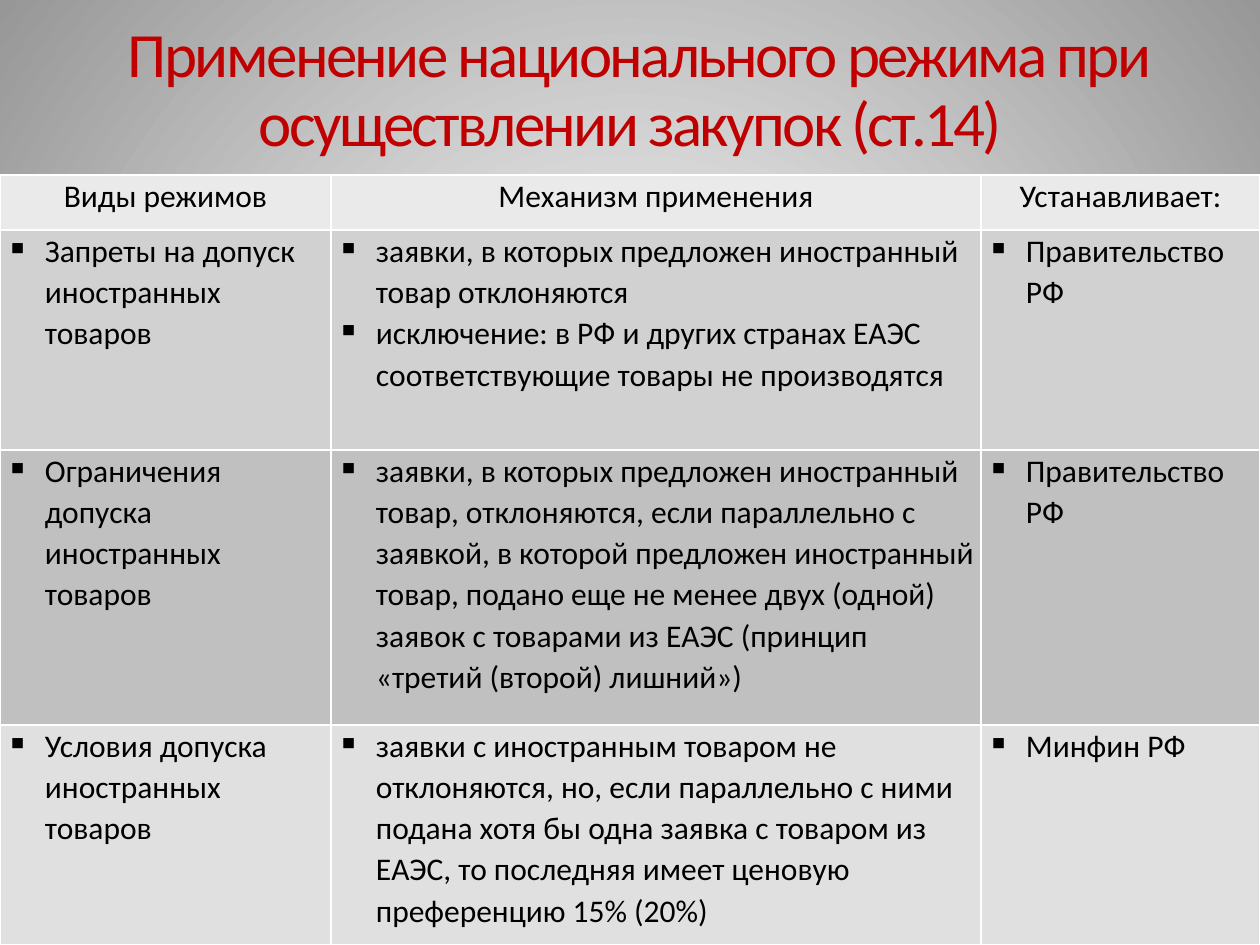
from dataclasses import dataclass

from lxml.etree import SubElement
from pptx import Presentation
from pptx.dml.color import RGBColor
from pptx.enum.text import MSO_ANCHOR, MSO_AUTO_SIZE, PP_ALIGN
from pptx.oxml.ns import qn
from pptx.util import Emu, Pt

FONT = "Calibri"
WIDTH, HEIGHT = 1260, 945
TABLE_TOP = 175
COLS = (331, 650, 279)
INDENT = 39


@dataclass(frozen=True)
class Row:
    height: int
    fill: str
    cells: tuple[tuple[str, ...], ...]
    header: bool = False


ROWS = (
    Row(55, "EAEAEA", (("Виды режимов",), ("Механизм применения",), ("Устанавливает:",)), True),
    Row(220, "D1D1D1", (
        ("Запреты на допуск иностранных товаров",),
        ("заявки, в которых предложен иностранный товар отклоняются",
         "исключение: в РФ и других странах ЕАЭС соответствующие товары не производятся"),
        ("Правительство РФ",),
    )),
    Row(275, "C0C0C0", (
        ("Ограничения допуска иностранных товаров",),
        ("заявки, в которых предложен иностранный товар, отклоняются, если параллельно "
         "с заявкой, в которой предложен иностранный товар, подано еще не менее двух "
         "(одной) заявок с товарами из ЕАЭС (принцип «третий (второй) лишний»)",),
        ("Правительство РФ",),
    )),
    Row(220, "E0E0E0", (
        ("Условия допуска иностранных товаров",),
        ("заявки с иностранным товаром не отклоняются, но, если параллельно с ними "
         "подана хотя бы одна заявка с товаром из ЕАЭС, то последняя имеет ценовую "
         "преференцию 15% (20%)",),
        ("Минфин РФ",),
    )),
)


def px(count: int) -> Emu:
    return Emu(round(count * 914400 / 126))


def color(code: str) -> RGBColor:
    return RGBColor.from_string(code)


def style(run, size: int, code: str) -> None:
    run.font.name = FONT
    run.font.size = Pt(size)
    run.font.bold = False
    run.font.color.rgb = color(code)


def paint_back(slide) -> None:
    """Fill the background with a gradient that spreads from the centre."""
    fill = slide.background.fill
    fill.gradient()
    for stop, (place, code) in zip(fill.gradient_stops, ((0, "FFFFFF"), (1, "979797"))):
        stop.position = place
        stop.color.rgb = color(code)
    grad = slide.element.find(".//" + qn("a:gradFill"))
    grad.remove(grad.find(qn("a:lin")))
    ring = SubElement(grad, qn("a:path"), path="circle")
    SubElement(ring, qn("a:fillToRect"), {side: "50000" for side in "ltrb"})


def add_title(slide) -> None:
    title = slide.shapes.title
    title.left, title.top, title.width, title.height = map(px, (53, 16, 1155, 145))
    frame = title.text_frame
    frame.margin_left = frame.margin_right = frame.margin_top = frame.margin_bottom = 0
    frame.word_wrap = True
    frame.auto_size = MSO_AUTO_SIZE.NONE
    frame.vertical_anchor = MSO_ANCHOR.MIDDLE
    para = frame.paragraphs[0]
    para.alignment = PP_ALIGN.CENTER
    para.line_spacing = 0.9
    parts = ((" ", 40), ("Применение национального режима при осуществлении закупок (ст.14)", 36))
    for text, size in parts:
        run = para.add_run()
        run.text = text
        style(run, size, "C00000")
        run.font._element.set("spc", "-150")


def add_bullet(para) -> None:
    props = para._p.get_or_add_pPr()
    props.set("marL", str(px(INDENT)))
    props.set("indent", str(-px(INDENT)))
    SubElement(props, qn("a:buChar"), char="▪")


def add_borders(cell) -> None:
    props = cell._tc.get_or_add_tcPr()
    for side in "LRTB":
        line = SubElement(props, qn(f"a:ln{side}"), w=str(Pt(1)))
        solid = SubElement(line, qn("a:solidFill"))
        SubElement(solid, qn("a:srgbClr"), val="FFFFFF")


def fill_cell(cell, texts: tuple[str, ...], row: Row) -> None:
    add_borders(cell)
    cell.fill.solid()
    cell.fill.fore_color.rgb = color(row.fill)
    cell.margin_left = cell.margin_right = px(6)
    cell.margin_top = cell.margin_bottom = 0
    cell.text_frame.text = "\n".join(texts)
    for para in cell.text_frame.paragraphs:
        if row.header:
            para.alignment = PP_ALIGN.CENTER
        else:
            add_bullet(para)
        para.line_spacing = 1.07
        style(para.runs[0], 18, "000000")


def add_grid(slide) -> None:
    frame = slide.shapes.add_table(
        len(ROWS), len(COLS), 0, px(TABLE_TOP), px(sum(COLS)), px(sum(r.height for r in ROWS)))
    table = frame.table
    for col, width in zip(table.columns, COLS):
        col.width = px(width)
    for line, row in zip(table.rows, ROWS):
        line.height = px(row.height)
        for cell, texts in zip(line.cells, row.cells):
            fill_cell(cell, texts, row)


def main() -> None:
    deck = Presentation()
    deck.slide_width, deck.slide_height = px(WIDTH), px(HEIGHT)
    slide = deck.slides.add_slide(deck.slide_layouts[5])
    paint_back(slide)
    add_title(slide)
    add_grid(slide)
    deck.save("out.pptx")


if __name__ == "__main__":
    main()
